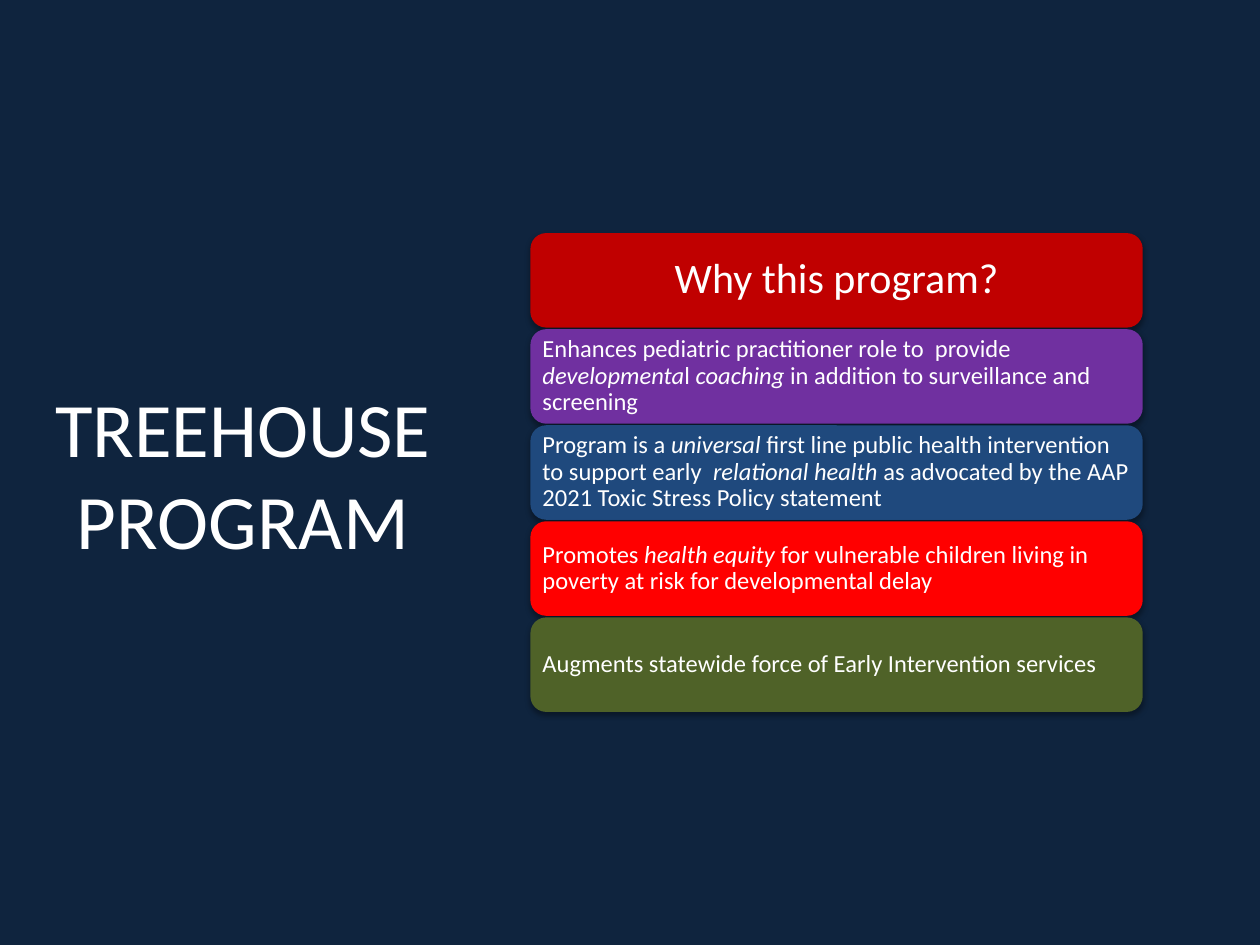
from lxml.etree import SubElement
from pptx import Presentation
from pptx.dml.color import RGBColor
from pptx.enum.shapes import MSO_SHAPE
from pptx.enum.text import MSO_ANCHOR, PP_ALIGN
from pptx.oxml.ns import qn
from pptx.util import Inches, Pt

FONT = "Calibri"
WHITE = "FFFFFF"
BACKGROUND = "0F243E"
HEADING = ("C00000", [("Why this program?", False)])
REASONS = [
    ("7030A0", [
        ("Enhances pediatric practitioner role to  provide ", False),
        ("developmenta", True),
        ("l ", False),
        ("coaching", True),
        (" in addition to surveillance and screening", False),
    ]),
    ("1F497D", [
        ("Program is a ", False),
        ("universal ", True),
        ("first line public health intervention to support early ", False),
        (" relational health", True),
        (" as advocated by the AAP 2021 Toxic Stress Policy statement", False),
    ]),
    ("FF0000", [
        ("Promotes ", False),
        ("health equity ", True),
        ("for vulnerable children living in poverty at risk for developmental delay", False),
    ]),
    ("4F6228", [("Augments statewide force of Early Intervention services", False)]),
]


def color(value):
    """Turn a hex string into a color."""
    return RGBColor.from_string(value)


def format_run(run, size, italic=False):
    """Give a run the slide's font in white."""
    run.font.name = FONT
    run.font.size = Pt(size)
    run.font.italic = italic
    run.font.color.rgb = color(WHITE)


def add_shadow(shape):
    """Put a soft shadow just below a shape."""
    shape.shadow.inherit = False
    effects = shape._element.spPr.find(qn("a:effectLst"))
    shadow = SubElement(effects, qn("a:outerShdw"), blurRad=str(Pt(3.1)),
                        dist=str(Pt(1.8)), dir="5400000", rotWithShape="0")
    shade = SubElement(shadow, qn("a:srgbClr"), val="000000")
    SubElement(shade, qn("a:alpha"), val="35000")


def add_title(slide, left, top, width, height):
    """Write the slide title in the middle of its box."""
    text_frame = slide.shapes.add_textbox(left, top, width, height).text_frame
    text_frame.word_wrap = True
    text_frame.vertical_anchor = MSO_ANCHOR.MIDDLE
    paragraph = text_frame.paragraphs[0]
    paragraph.text = "TREEHOUSE\vPROGRAM"
    paragraph.alignment = PP_ALIGN.CENTER
    for run in paragraph.runs:
        format_run(run, 44)


def add_card(slide, left, top, width, height, card, size, alignment, inset):
    """Draw one rounded card with its text."""
    fill, parts = card
    shape = slide.shapes.add_shape(MSO_SHAPE.ROUNDED_RECTANGLE, left, top, width, height)
    shape.fill.solid()
    shape.fill.fore_color.rgb = color(fill)
    shape.line.fill.background()
    add_shadow(shape)
    text_frame = shape.text_frame
    text_frame.word_wrap = True
    text_frame.vertical_anchor = MSO_ANCHOR.MIDDLE
    text_frame.margin_left = text_frame.margin_right = inset
    text_frame.margin_top = text_frame.margin_bottom = inset
    paragraph = text_frame.paragraphs[0]
    paragraph.alignment = alignment
    paragraph.line_spacing = 0.9
    for text, italic in parts:
        run = paragraph.add_run()
        run.text = text
        format_run(run, size, italic)


def add_card_stack(slide, left, top, width, height):
    """Stack the heading card and the reason cards evenly in a box."""
    card_height = Inches(0.75)
    step = (height - card_height) // len(REASONS)
    add_card(slide, left, top, width, card_height, HEADING, 24, PP_ALIGN.CENTER, Inches(0.1))
    for index, reason in enumerate(REASONS, start=1):
        add_card(slide, left, top + index * step, width, card_height,
                 reason, 14, PP_ALIGN.LEFT, Inches(0.06))


def main():
    """Build and save the slide."""
    presentation = Presentation()
    presentation.slide_width = Inches(10)
    presentation.slide_height = Inches(7.5)
    slide = presentation.slides.add_slide(presentation.slide_layouts[6])
    slide.background.fill.solid()
    slide.background.fill.fore_color.rgb = color(BACKGROUND)
    add_title(slide, Inches(0.25), Inches(1.45), Inches(3.36), Inches(4.6))
    add_card_stack(slide, Inches(4.21), Inches(1.85), Inches(4.86), Inches(3.8))
    presentation.save("out.pptx")


if __name__ == "__main__":
    main()
